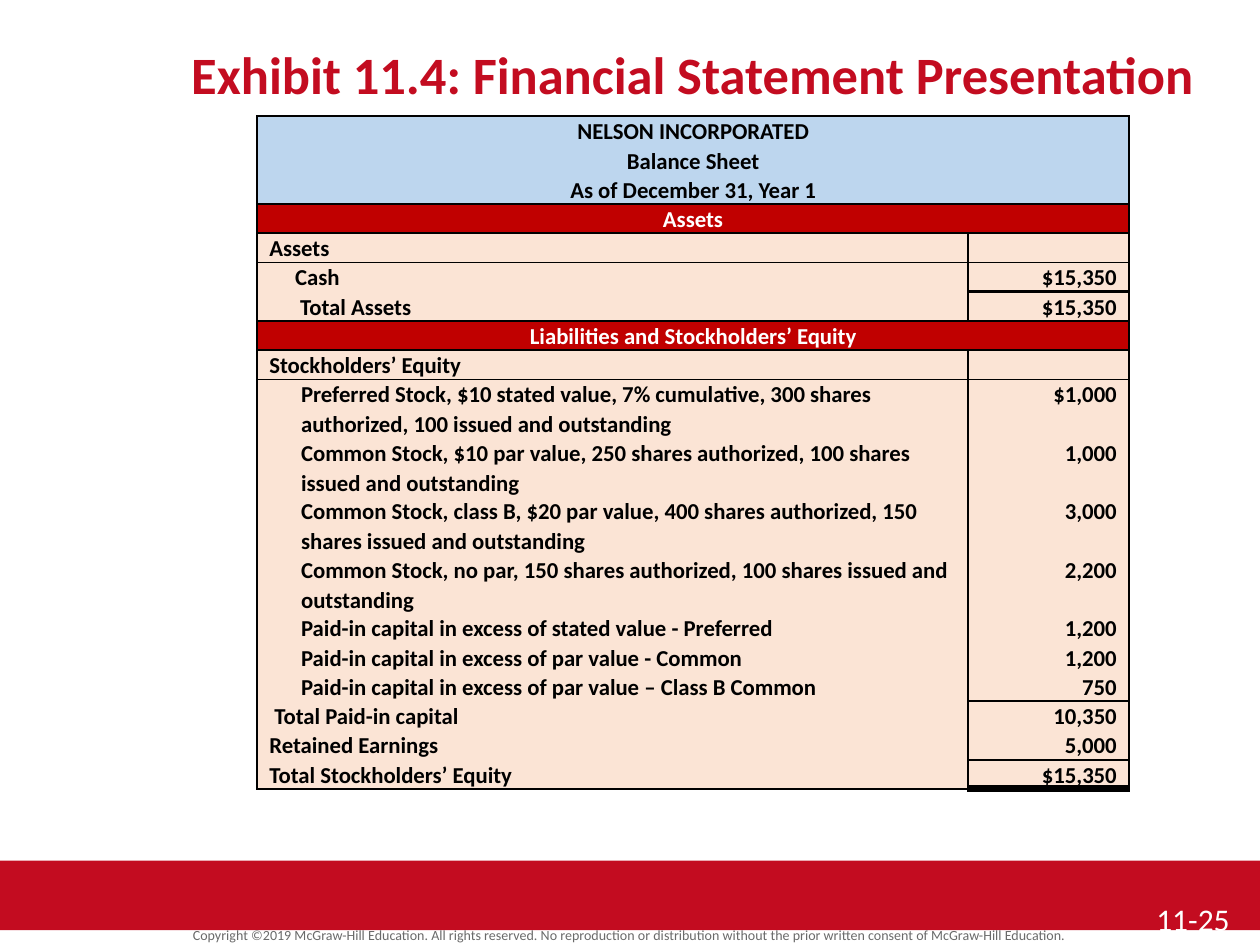
"""Build a slide with a balance sheet table."""
from lxml.etree import SubElement as Sub
from pptx import Presentation
from pptx.dml.color import RGBColor as Rgb
from pptx.enum.shapes import MSO_SHAPE as Shape
from pptx.enum.text import MSO_ANCHOR as Anchor, PP_ALIGN as Align
from pptx.oxml.ns import qn
from pptx.util import Cm, Pt

HUE = {"red": "C30C20", "band": "C00000", "head": "BDD6EE", "body": "FBE4D5",
       "ink": "000000", "white": "FFFFFF", "grey": "6A6A6A"}
FACE = "Calibri"
LINE = 0.58
COLS = (14.33, 3.25)

TEXTS = [
    ("Copyright ©2019 McGraw-Hill Education. All rights reserved. No reproduction or "
     "distribution without the prior written consent of McGraw-Hill Education.",
     (0, 18.64, 25.4, 0.48), Align.CENTER, 0.8, {"size": Pt(8)}, "grey"),
    ("Exhibit 11.4: Financial Statement Presentation",
     (2.54, 0.64, 22.86, 1.7), Align.CENTER, 1, {"size": Pt(30), "bold": True}, "red"),
    ("11-25", (23.06, 17.98, 2.34, 1.07), Align.LEFT, 1, {"size": Pt(18)}, "white"),
]

BANDS = {"NELSON INCORPORATED\nBalance Sheet\nAs of December 31, Year 1": ("head", "ink"),
         "Assets": ("band", "white"),
         "Liabilities and Stockholders’ Equity": ("band", "white")}
HEAD, ASSETS, EQUITY = BANDS

# label, value (None spans), indent, lines, rule under label, rule under value
ROWS = [
    (HEAD, None, 0, 3, 1, 1),
    (ASSETS, None, 0, 1, 1, 1),
    ("Assets", "", 0, 1, 1, 1),
    ("Cash", "$15,350", 0.52, 1, 0, 2.25),
    ("Total Assets", "$15,350", 0.62, 1, 1, 1),
    (EQUITY, None, 0, 1, 1, 1),
    ("Stockholders’ Equity", "", 0, 1, 1, 1),
    ("Preferred Stock, $10 stated value, 7% cumulative, 300 shares authorized, "
     "100 issued and outstanding", "$1,000", 0.64, 2, 0, 0),
    ("Common Stock, $10 par value, 250 shares authorized, 100 shares issued and "
     "outstanding", "1,000", 0.64, 2, 0, 0),
    ("Common Stock, class B, $20 par value, 400 shares authorized, 150 shares issued "
     "and outstanding", "3,000", 0.64, 2, 0, 0),
    ("Common Stock, no par, 150 shares authorized, 100 shares issued and outstanding",
     "2,200", 0.64, 2, 0, 0),
    ("Paid-in capital in excess of stated value - Preferred", "1,200", 0.64, 1, 0, 0),
    ("Paid-in capital in excess of par value - Common", "1,200", 0.64, 1, 0, 0),
    ("Paid-in capital in excess of par value – Class B Common", "750", 0.64, 1, 0, 1),
    ("Total Paid-in capital", "10,350", 0.1, 1, 0, 0),
    ("Retained Earnings", "5,000", 0, 1, 0, 1.5),
    ("Total Stockholders’ Equity", "$15,350", 0, 1, 1, 4.5),
]


def put(obj, vals):
    for key, val in vals.items():
        setattr(obj, key, val)


def style(para, look, hue):
    for run in para.runs:
        put(run.font, {"name": FACE, **look})
        run.font.color.rgb = Rgb.from_string(HUE[hue])


def rule(cell, side, width):
    props = cell._tc.get_or_add_tcPr()
    edge = Sub(props, qn(f"a:ln{side}"), w=str(int(Pt(width))))
    if width:
        Sub(Sub(edge, qn("a:solidFill")), qn("a:srgbClr"), val=HUE["ink"])
    else:
        Sub(edge, qn("a:noFill"))


def fill(cell, text, align, anchor, indent, tone, hue, top, base):
    put(cell, {"margin_top": 0, "margin_bottom": 0, "margin_left": Cm(0.25),
               "margin_right": Cm(0.25), "vertical_anchor": anchor})
    for side, width in zip("LRTB", (1, 1, top, base)):
        rule(cell, side, width)
    cell.fill.solid()
    cell.fill.fore_color.rgb = Rgb.from_string(HUE[tone])
    cell.text_frame.text = text
    for para in cell.text_frame.paragraphs:
        put(para, {"alignment": align, "line_spacing": 1.07})
        para._p.get_or_add_pPr().set("marL", str(int(Cm(indent))))
        style(para, {"size": Pt(13), "bold": True}, hue)
        if not para.runs:
            Sub(para._p, qn("a:endParaRPr"), sz="1300")


def add_text(slide, text, box, align, space, look, hue):
    frame = slide.shapes.add_textbox(*map(Cm, box)).text_frame
    put(frame, {"word_wrap": True, "vertical_anchor": Anchor.MIDDLE,
                "margin_top": 0, "margin_bottom": 0})
    frame.text = text
    para = frame.paragraphs[0]
    put(para, {"alignment": align, "line_spacing": space})
    style(para, look, hue)


def add_sheet(slide):
    high = LINE * sum(row[3] for row in ROWS)
    table = slide.shapes.add_table(len(ROWS), 2, Cm(5.18), Cm(2.34),
                                   Cm(sum(COLS)), Cm(high)).table
    put(table, {"first_row": False, "horz_banding": False})
    for col, wide in zip(table.columns, COLS):
        col.width = Cm(wide)
    above = (1, 1)
    for num, (label, value, indent, lines, *below) in enumerate(ROWS):
        table.rows[num].height = Cm(LINE * lines)
        left, right = table.cell(num, 0), table.cell(num, 1)
        wide = value is None
        tone, hue = BANDS[label] if wide else ("body", "ink")
        if wide:
            left.merge(right)
        fill(left, label, Align.CENTER if wide else Align.LEFT, Anchor.BOTTOM,
             indent, tone, hue, above[0], below[0])
        fill(right, value or "", Align.RIGHT, Anchor.TOP,
             0, tone, hue, above[1], below[1])
        above = below


def main():
    deck = Presentation()
    put(deck, {"slide_width": Cm(25.4), "slide_height": Cm(19.05)})
    slide = deck.slides.add_slide(deck.slide_layouts[6])
    bar = slide.shapes.add_shape(Shape.RECTANGLE, 0, Cm(17.35), Cm(25.4), Cm(1.4))
    bar.shadow.inherit = False
    bar.fill.solid()
    bar.fill.fore_color.rgb = Rgb.from_string(HUE["red"])
    bar.line.fill.background()
    for item in TEXTS:
        add_text(slide, *item)
    add_sheet(slide)
    deck.save("out.pptx")


if __name__ == "__main__":
    main()
